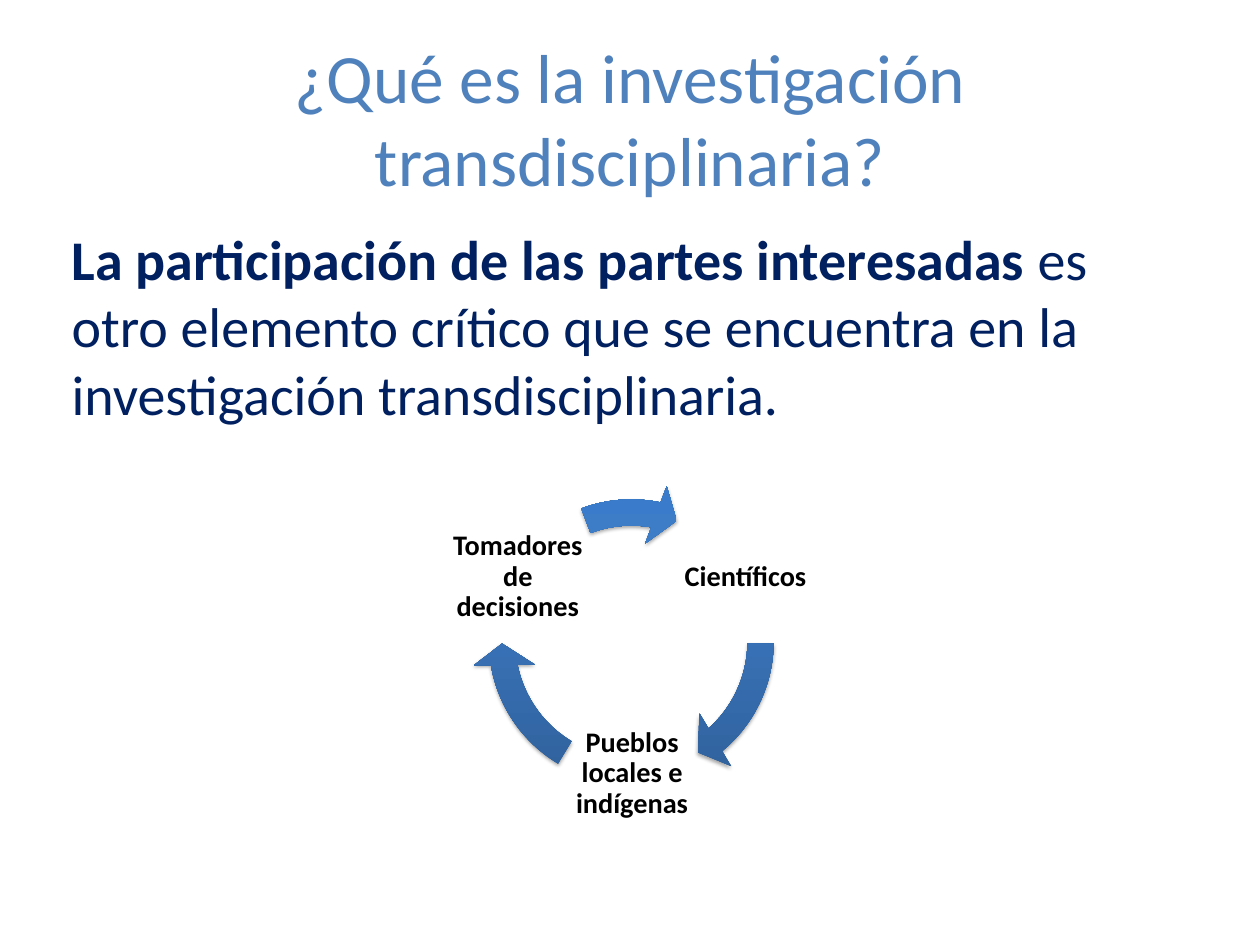
import pptx
import pptx.util
import pptx.dml.color
import pptx.enum.shapes
import pptx.enum.text
import pptx.oxml.ns
import lxml.etree

Inches = pptx.util.Inches
Align = pptx.enum.text.PP_ALIGN
Anchor = pptx.enum.text.MSO_ANCHOR
qn = pptx.oxml.ns.qn

COLORS = {"title": "4F81BD", "body": "002060", "label": "000000",
          "low": "2F5F99", "mid": "3D7CC7", "high": "3A7CCB", "shade": "000000"}


def write(para, text, size=23, color="label", bold=False, font="Calibri"):
    """Add a formatted run to a paragraph."""
    run = para.add_run()
    run.text = text
    run.font.name = font
    run.font.size = pptx.util.Pt(size)
    run.font.bold = bold
    run.font.color.rgb = pptx.dml.color.RGBColor.from_string(COLORS[color])


def tint(parent, color):
    """Add a colour element to an effect or a gradient stop."""
    return lxml.etree.SubElement(parent, qn("a:srgbClr"), val=COLORS[color])


class Deck:
    stops = [(0, "low"), (80, "mid"), (100, "high")]

    def __init__(self, width, height):
        self.prs = pptx.Presentation()
        self.prs.slide_width = Inches(width)
        self.prs.slide_height = Inches(height)
        self.slide = self.prs.slides.add_slide(self.prs.slide_layouts[6])

    def text(self, box, runs, align=Align.CENTER, anchor=Anchor.MIDDLE,
             inset=None, spacing=None):
        frame = self.slide.shapes.add_textbox(*map(Inches, box)).text_frame
        frame.word_wrap = True
        frame.vertical_anchor = anchor
        if inset is not None:
            frame.margin_left = frame.margin_right = Inches(inset)
            frame.margin_top = frame.margin_bottom = Inches(inset)
        para = frame.paragraphs[0]
        para.alignment = align
        if spacing:
            para.line_spacing = spacing
        for words, style in runs:
            write(para, words, **style)

    def arrow(self, box, start, end):
        """Draw a curved arrow; angles are in degrees, clockwise from the right."""
        kind = pptx.enum.shapes.MSO_SHAPE.CIRCULAR_ARROW
        shape = self.slide.shapes.add_shape(kind, *map(Inches, box))
        # Angles are stored in 1/60000 degree, scaled by 100000
        values = (0.082, 9.6 * 0.6, end * 0.6, start * 0.6, 0.096)
        for i, value in enumerate(values):
            shape.adjustments[i] = value
        shape.line.fill.background()

        # Gradient, dark at the bottom
        shape.fill.gradient()
        shape.fill.gradient_angle = 90
        props = shape._element.spPr
        ramp = props.find(".//" + qn("a:gsLst"))
        ramp.clear()
        for place, color in self.stops:
            tint(lxml.etree.SubElement(ramp, qn("a:gs"), pos=str(place * 1000)), color)

        # Soft shadow below
        shape.shadow.inherit = False
        shade = lxml.etree.SubElement(
            props.find(qn("a:effectLst")), qn("a:outerShdw"),
            blurRad="40000", dist="23000", dir="5400000", rotWithShape="0")
        lxml.etree.SubElement(tint(shade, "shade"), qn("a:alpha"), val="35000")


def main():
    deck = Deck(14.22, 10.67)

    # Title and body
    deck.text((0.71, 0.43, 12.8, 1.78),
              [("¿Qué es la investigación transdisciplinaria?",
                dict(size=56.3, color="title"))])
    body = dict(size=45.5, color="body")
    deck.text((0.71, 2.49, 12.45, 3.07),
              [("La participación de las partes interesadas ", dict(body, bold=True)),
               ("es otro elemento crítico que se encuentra en la "
                "investigación transdisciplinaria.", body)],
              align=Align.LEFT, anchor=Anchor.TOP)

    # Cycle: each label with the arrow that leaves it
    side = 1.53
    cycle = [("Científicos", 7.65, 5.75, 0.84, 49.43),
             ("Pueblos locales e indígenas", 6.37, 7.97, 120.97, 169.57),
             ("Tomadores de decisiones", 5.08, 5.75, 249.43, 280.98)]
    for label, left, top, start, end in cycle:
        deck.text((left, top, side, side), [(label, dict(bold=True))],
                  inset=0, spacing=0.9)
        deck.arrow((5.32, 5.44, 3.61, 3.61), start, end)

    deck.prs.save("out.pptx")


if __name__ == "__main__":
    main()
